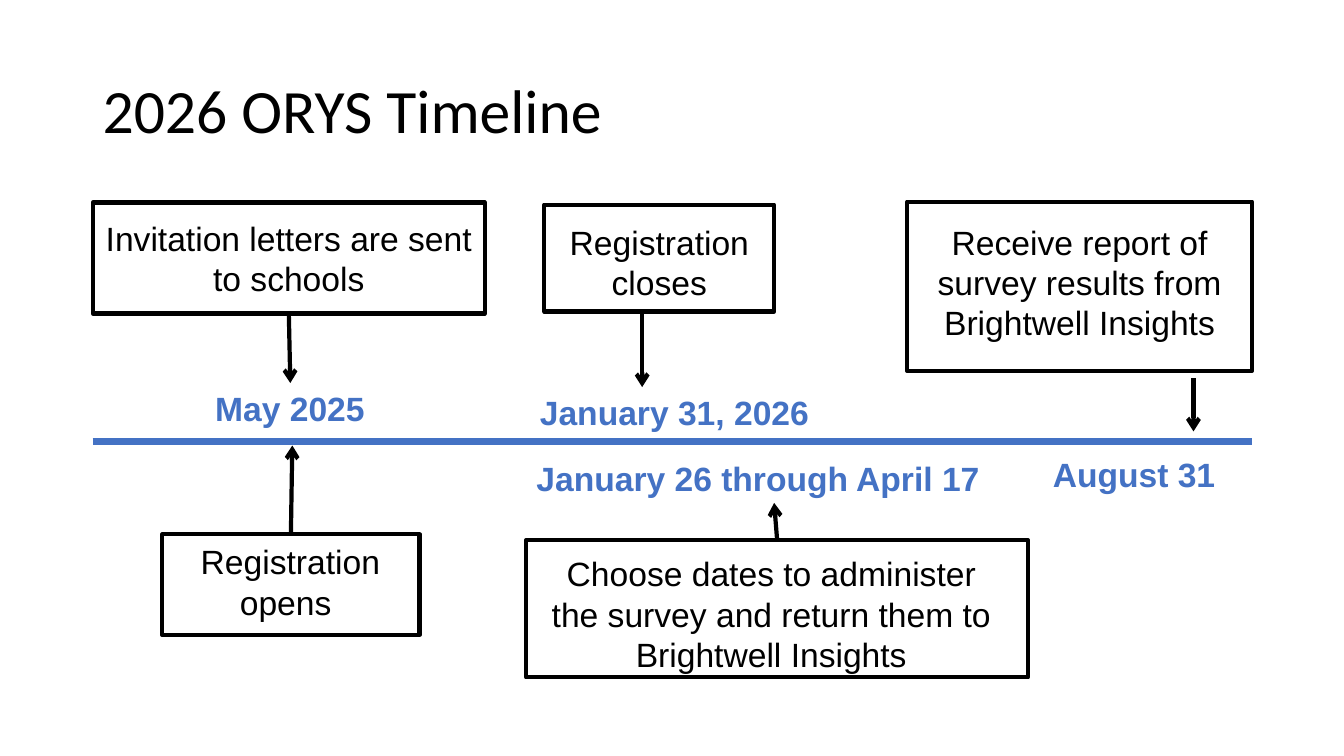
from dataclasses import dataclass

from lxml import etree
from pptx import Presentation
from pptx import util as u
from pptx.dml.color import RGBColor
from pptx.enum import shapes, text
from pptx.oxml.ns import qn


@dataclass(frozen=True)
class Theme:
    ink: str = "000000"
    paper: str = "FFFFFF"
    accent: str = "4472C4"
    heading_font: str = "Calibri"
    body_font: str = "Arial"
    heading_size: int = 44
    body_size: int = 24
    outline: int = 3
    axis: int = 5


def write(frame, wording, *, font, size, color, bold=False,
          align=text.PP_ALIGN.CENTER, anchor=text.MSO_ANCHOR.TOP, spacing=1.0):
    frame.word_wrap = True
    frame.vertical_anchor = anchor
    paragraph = frame.paragraphs[0]
    paragraph.alignment = align
    paragraph.line_spacing = spacing
    run = paragraph.add_run()
    run.text = wording
    run.font.name = font
    run.font.size = u.Pt(size)
    run.font.bold = bold
    run.font.color.rgb = RGBColor.from_string(color)


class TimelineSlide:
    def __init__(self, deck, theme):
        self.deck = deck
        self.theme = theme
        self.slide = deck.slides.add_slide(deck.slide_layouts[6])

    def across(self, percent):
        return round(self.deck.slide_width * percent / 100)

    def down(self, percent):
        return round(self.deck.slide_height * percent / 100)

    def place(self, area):
        left, top, width, height = area
        return self.across(left), self.down(top), self.across(width), self.down(height)

    def words(self, area, wording, **style):
        style = {"font": self.theme.body_font, "size": self.theme.body_size,
                 "color": self.theme.ink, **style}
        holder = self.slide.shapes.add_textbox(*self.place(area))
        write(holder.text_frame, wording, **style)

    def heading(self, area, wording):
        self.words(area, wording, font=self.theme.heading_font,
                   size=self.theme.heading_size, align=text.PP_ALIGN.LEFT,
                   anchor=text.MSO_ANCHOR.MIDDLE, spacing=0.9)

    def date(self, area, wording):
        self.words(area, wording, color=self.theme.accent, bold=True)

    def box(self, area, filled=True):
        frame = self.slide.shapes.add_shape(
            shapes.MSO_SHAPE.RECTANGLE, *self.place(area))
        frame.shadow.inherit = False
        if filled:
            frame.fill.solid()
            frame.fill.fore_color.rgb = RGBColor.from_string(self.theme.paper)
        else:
            frame.fill.background()
        frame.line.color.rgb = RGBColor.from_string(self.theme.ink)
        frame.line.width = u.Pt(self.theme.outline)
        return frame

    def line(self, start, end, color, width):
        stroke = self.slide.shapes.add_connector(
            shapes.MSO_CONNECTOR.STRAIGHT,
            self.across(start[0]), self.down(start[1]),
            self.across(end[0]), self.down(end[1]))
        stroke.line.color.rgb = RGBColor.from_string(color)
        stroke.line.width = u.Pt(width)
        etree.SubElement(stroke._element.spPr, qn("a:effectLst"))
        return stroke

    def arrow(self, start, end, source=None, side=None):
        pointer = self.line(start, end, self.theme.ink, self.theme.outline)
        etree.SubElement(pointer.line._get_or_add_ln(), qn("a:tailEnd"), type="arrow")
        if source is not None:
            pointer.begin_connect(source, side)


TOP, BOTTOM = 0, 2
DATE_HEIGHT = 6.67
TWO_LINES, THREE_LINES = 12.13, 17.47

EVENTS = {
    "invitation": ((6.9, 26.8, 29.18, 14.67), (6.9, 28.13, 29.18, TWO_LINES),
                   "Invitation letters are sent to schools"),
    "opening": ((12.08, 70.67, 19.13, 13.33), (11.93, 70.93, 19.35, TWO_LINES),
                "Registration opens "),
    "report": ((67.5, 26.67, 25.65, 22.4), (67.95, 28.67, 24.75, THREE_LINES),
               "Receive report of survey results from Brightwell Insights"),
    "closing": ((40.5, 27.07, 17.1, 14.13), (38.93, 28.67, 20.25, TWO_LINES),
                "Registration closes"),
    "survey": ((39.15, 71.47, 37.35, 18.13), (39.98, 72.53, 34.8, THREE_LINES),
               "Choose dates to administer the survey and return them to "
               "Brightwell Insights"),
}

DATES = [
    ((14.18, 50.67, 14.78, DATE_HEIGHT), "May 2025"),
    ((38.63, 51.2, 23.1, DATE_HEIGHT), "January 31, 2026"),
    ((38.33, 59.87, 36.15, DATE_HEIGHT), "January 26 through April 17"),
    ((76.35, 59.33, 16.05, DATE_HEIGHT), "August 31"),
]

ARROWS = [
    ((21.53, 41.47), (21.6, 50.67), "invitation", BOTTOM),
    ((21.65, 70.67), (21.75, 58.93), "opening", TOP),
    ((57.83, 71.47), (57.6, 66.53), "survey", TOP),
    ((47.78, 41.47), (47.78, 51.2), None, None),
    ((88.8, 50), (88.8, 57.07), None, None),
]


def main():
    deck = Presentation()
    deck.slide_width, deck.slide_height = u.Inches(13.33), u.Inches(7.5)
    theme = Theme()
    timeline = TimelineSlide(deck, theme)

    timeline.heading((6.9, 5.33, 86.25, 19.33), "2026 ORYS Timeline")
    timeline.line((6.9, 58.4), (93.15, 58.4), theme.accent, theme.axis)

    boxes = {}
    for event, (frame_area, wording_area, wording) in EVENTS.items():
        boxes[event] = timeline.box(frame_area, filled=event != "opening")
        timeline.words(wording_area, wording)
    for area, wording in DATES:
        timeline.date(area, wording)
    for start, end, event, side in ARROWS:
        timeline.arrow(start, end, boxes.get(event), side)

    deck.save("out.pptx")


if __name__ == "__main__":
    main()
